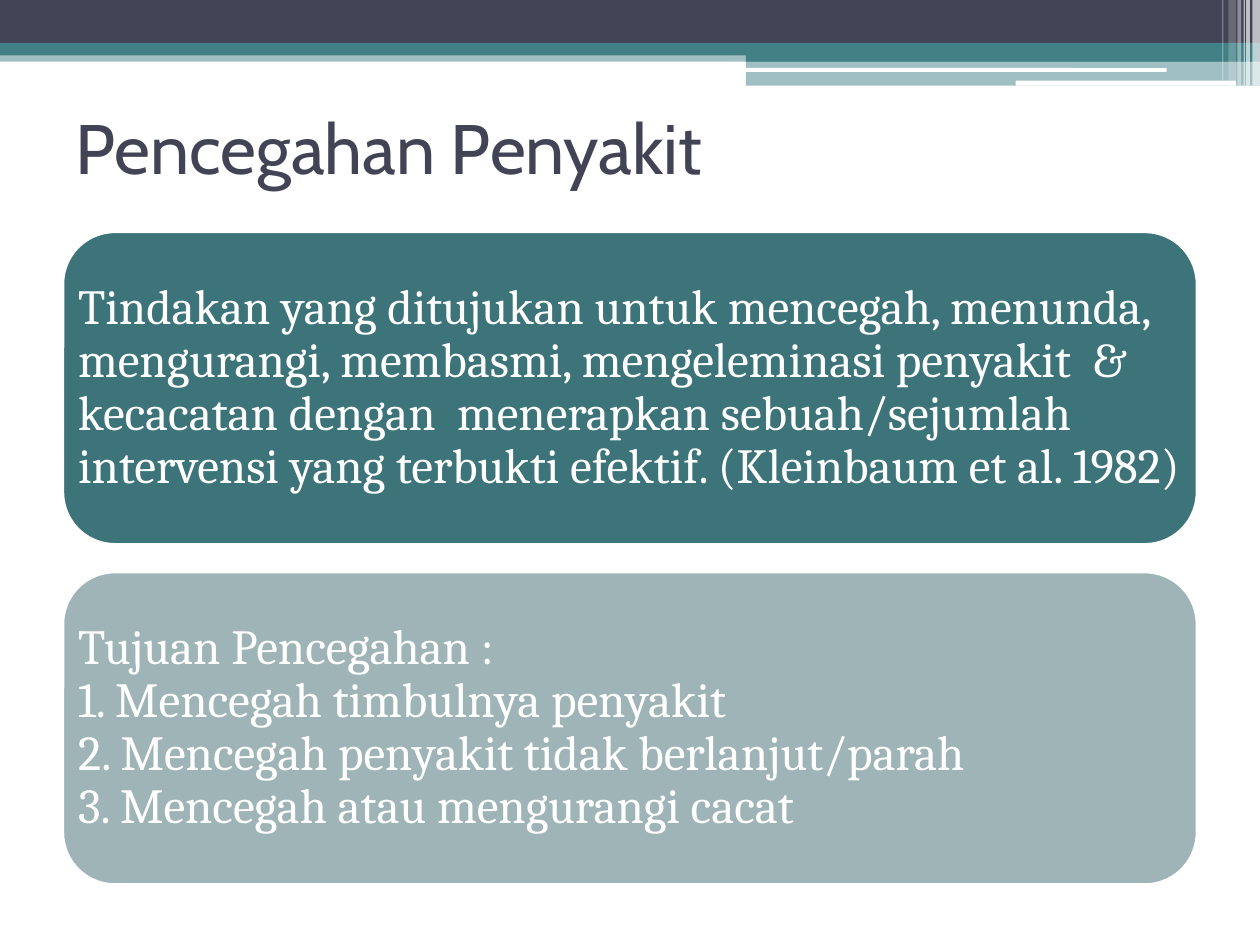
from lxml.etree import SubElement
from pptx import Presentation
from pptx.dml.color import RGBColor
from pptx.enum.shapes import MSO_SHAPE as Shape
from pptx.enum.text import MSO_ANCHOR as Anchor, PP_ALIGN as Align
from pptx.oxml.ns import qn
from pptx.util import Inches, Pt

COLORS = {
    "navy": "424456",
    "teal": "438086",
    "deep_teal": "3D747A",
    "pale_teal": "9FB4B6",
    "white": "FFFFFF",
}

# Content
TITLE = "Pencegahan Penyakit"
PANELS = [
    ("deep_teal", [
        "Tindakan yang ditujukan untuk mencegah, menunda, mengurangi, "
        "membasmi, mengeleminasi penyakit  & kecacatan dengan  menerapkan "
        "sebuah/sejumlah intervensi yang terbukti efektif. "
        "(Kleinbaum et al. 1982)",
    ]),
    ("pale_teal", [
        "Tujuan Pencegahan :",
        "1. Mencegah timbulnya penyakit",
        "2. Mencegah penyakit tidak berlanjut/parah",
        "3. Mencegah atau mengurangi cacat",
    ]),
]

# Header bands: left, top, width, height, colour, opacity in percent
BANDS = [
    (0, 0.4, 10, 0.09, "teal", 50),
    (0, 0, 10, 0.34, "navy", 100),
    (0, 0.34, 10, 0.1, "teal", 100),
    (5.92, 0.39, 4.08, 0.1, "teal", 100),
    (5.92, 0.48, 4.08, 0.2, "teal", 50),
]
# White rules: left, top, width, height
RULES = [(5.91, 0.54, 3.35, 0.03), (8.06, 0.64, 1.75, 0.04)]
# Stripes in the right corner: left, width, height, opacity in percent
STRIPES = [
    (9.94, 0.06, 0.68, 65),
    (9.89, 0.03, 0.68, 65),
    (9.87, 0.01, 0.68, 60),
    (9.82, 0.03, 0.68, 40),
    (9.75, 0.06, 0.64, 20),
    (9.7, 0.01, 0.64, 30),
]

# Layout
MARGIN, CONTENT_WIDTH = 0.5, 9
PANEL_TOP, PANEL_HEIGHT, PANEL_GAP = 1.84, 2.48, 0.22


def rgb(color):
    return RGBColor.from_string(COLORS[color])


def add_block(slide, kind, box, color, opacity=100):
    block = slide.shapes.add_shape(kind, *map(Inches, box))
    block.shadow.inherit = False
    block.fill.solid()
    block.fill.fore_color.rgb = rgb(color)
    block.line.fill.background()
    if opacity < 100:
        fill_color = block.fill._xPr.find(qn("a:solidFill"))[0]
        SubElement(fill_color, qn("a:alpha"), val=str(opacity * 1000))
    return block


def add_text(paragraph, text, font_name, size, color):
    paragraph.alignment = Align.LEFT
    run = paragraph.add_run()
    run.text = text
    run.font.name = font_name
    run.font.size = Pt(size)
    run.font.color.rgb = rgb(color)


def add_header(slide):
    for *box, color, opacity in BANDS:
        add_block(slide, Shape.RECTANGLE, box, color, opacity)
    for box in RULES:
        add_block(slide, Shape.ROUNDED_RECTANGLE, box, "white")
    for left, width, height, opacity in STRIPES:
        add_block(slide, Shape.RECTANGLE, (left, 0, width, height), "white", opacity)


def add_title(slide):
    title = slide.shapes.add_textbox(
        *map(Inches, (MARGIN, 0.75, CONTENT_WIDTH, 0.83)))
    frame = title.text_frame
    frame.word_wrap = True
    frame.vertical_anchor = Anchor.MIDDLE
    add_text(frame.paragraphs[0], TITLE, "Cabin", 40, "navy")


def add_panel(slide, top, color, lines):
    box = (MARGIN, top, CONTENT_WIDTH, PANEL_HEIGHT)
    panel = add_block(slide, Shape.ROUNDED_RECTANGLE, box, color)
    panel.line.color.rgb = rgb("white")
    panel.line.width = Pt(1.5)
    frame = panel.text_frame
    frame.word_wrap = True
    frame.vertical_anchor = Anchor.MIDDLE
    # The rounded corners already hold the text off the edges
    frame.margin_left = frame.margin_right = 0
    frame.margin_top = frame.margin_bottom = 0
    for index, line in enumerate(lines):
        paragraph = frame.add_paragraph() if index else frame.paragraphs[0]
        paragraph.line_spacing = 0.9
        add_text(paragraph, line, "Cambria", 28, "white")


def main():
    deck = Presentation()
    deck.slide_width, deck.slide_height = Inches(10), Inches(7.5)
    slide = deck.slides.add_slide(deck.slide_layouts[6])
    add_header(slide)
    add_title(slide)
    for index, (color, lines) in enumerate(PANELS):
        top = PANEL_TOP + index * (PANEL_HEIGHT + PANEL_GAP)
        add_panel(slide, top, color, lines)
    deck.save("out.pptx")


if __name__ == "__main__":
    main()
